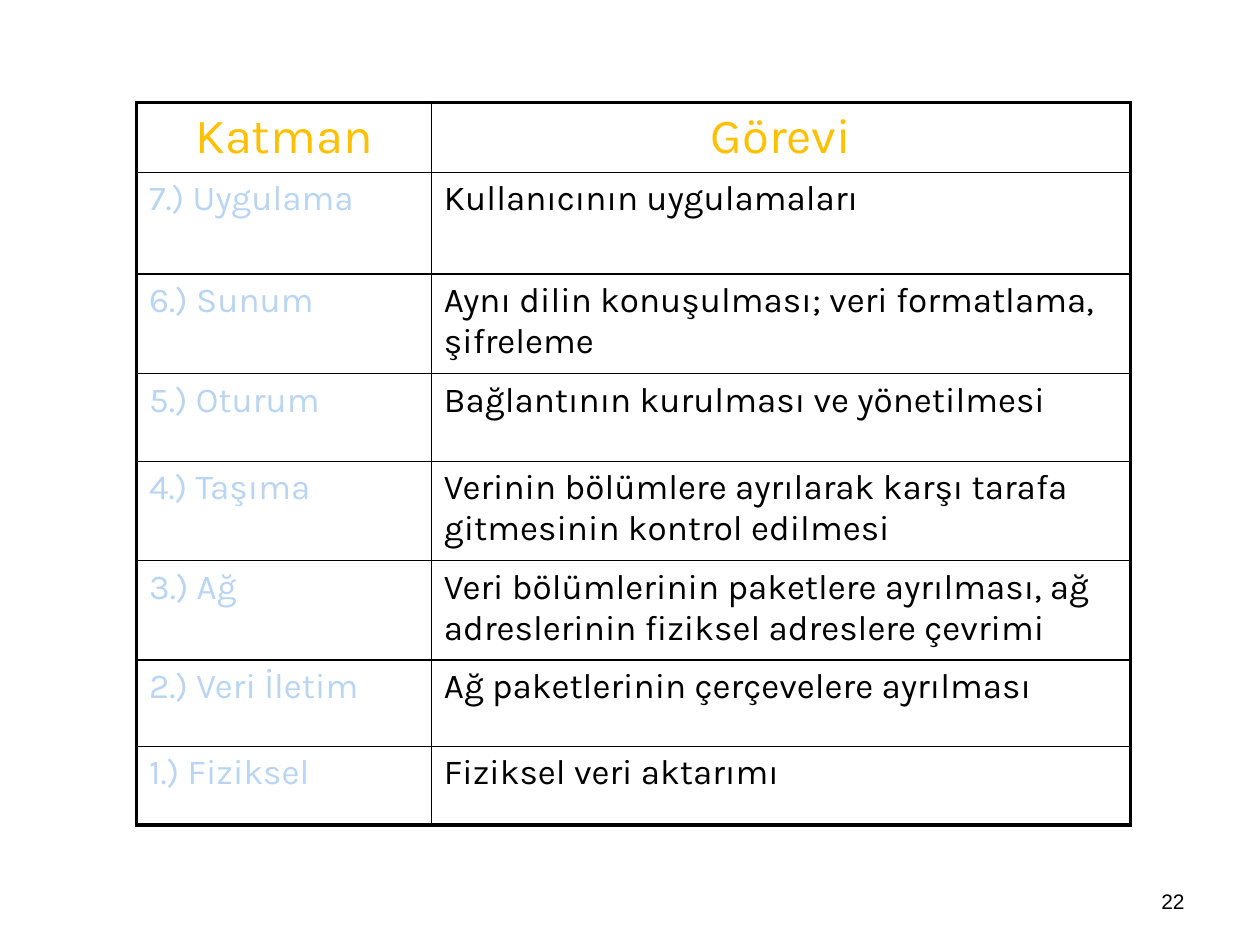
import pptx
import pptx.util
import pptx.dml.color
import pptx.enum.text
import pptx.oxml
import pptx.oxml.ns

Pt = pptx.util.Pt
RGB = pptx.dml.color.RGBColor
ALIGN = pptx.enum.text.PP_ALIGN

GOLD = RGB(0xFF, 0xC0, 0x00)
BLUE = RGB(0xB9, 0xD5, 0xF1)
BLACK = RGB(0x00, 0x00, 0x00)
THICK, THIN = 2.25, 1

HEADS = ("Katman", "Görevi")
LAYERS = [
    ("7.) Uygulama", "Kullanıcının uygulamaları"),
    ("6.) Sunum", "Aynı dilin konuşulması; veri formatlama, şifreleme"),
    ("5.) Oturum", "Bağlantının kurulması ve yönetilmesi"),
    ("4.) Taşıma", "Verinin bölümlere ayrılarak karşı tarafa "
                   "gitmesinin kontrol edilmesi"),
    ("3.) Ağ", "Veri bölümlerinin paketlere ayrılması, ağ "
               "adreslerinin fiziksel adreslere çevrimi"),
    ("2.) Veri İletim", "Ağ paketlerinin çerçevelere ayrılması"),
    ("1.) Fiziksel", "Fiziksel veri aktarımı"),
]
WIDTHS = (168.5, 399.5)
HEIGHTS = (39.6, 58.2, 56.8, 50.2, 56.8, 56.8, 49.4, 44.8)


def write(frame, text, size=20, color=BLACK, font="Karla", align=ALIGN.LEFT):
    """Put one formatted paragraph into a text frame."""
    para = frame.paragraphs[0]
    para.alignment = align
    run = para.add_run()
    run.text = text
    run.font.size = Pt(size)
    run.font.name = font
    run.font.color.rgb = color


def edge(cell, side, width):
    """Draw one black border; call in the order L, R, T, B."""
    line = pptx.oxml.parse_xml(
        f'<a:ln{side} {pptx.oxml.ns.nsdecls("a")} w="{int(Pt(width))}">'
        f'<a:solidFill><a:srgbClr val="{BLACK}"/></a:solidFill></a:ln{side}>')
    cell._tc.get_or_add_tcPr().append(line)


def add_grid(slide):
    """Add the table of layers and their tasks."""
    rows, cols = len(HEIGHTS), len(WIDTHS)
    table = slide.shapes.add_table(
        rows, cols, Pt(78), Pt(58.5), Pt(sum(WIDTHS)), Pt(sum(HEIGHTS))).table
    table.first_row = table.horz_banding = False
    for col, width in zip(table.columns, WIDTHS):
        col.width = Pt(width)
    for row, height in zip(table.rows, HEIGHTS):
        row.height = Pt(height)

    for r, texts in enumerate([HEADS] + LAYERS):
        for c, text in enumerate(texts):
            cell = table.cell(r, c)
            if r == 0:
                write(cell.text_frame, text, size=28, color=GOLD,
                      align=ALIGN.CENTER)
            else:
                write(cell.text_frame, text, color=BLACK if c else BLUE)
            # Thick frame outside, thin rules inside
            outer = {"L": c == 0, "R": c == cols - 1,
                     "T": r == 0, "B": r == rows - 1}
            for side, thick in outer.items():
                edge(cell, side, THICK if thick else THIN)
            cell.fill.background()


def add_page(slide, text):
    """Add the page number at the lower right."""
    box = slide.shapes.add_textbox(Pt(516), Pt(500.5), Pt(168), Pt(28.8))
    frame = box.text_frame
    frame.word_wrap = True
    frame.vertical_anchor = pptx.enum.text.MSO_ANCHOR.MIDDLE
    write(frame, text, size=12, font="Arial", align=ALIGN.RIGHT)


def main():
    deck = pptx.Presentation()
    deck.slide_width, deck.slide_height = Pt(720), Pt(540)
    # Blank layout: the slide has no title
    slide = deck.slides.add_slide(deck.slide_layouts[6])
    add_grid(slide)
    add_page(slide, "22")
    deck.save("out.pptx")


if __name__ == "__main__":
    main()
